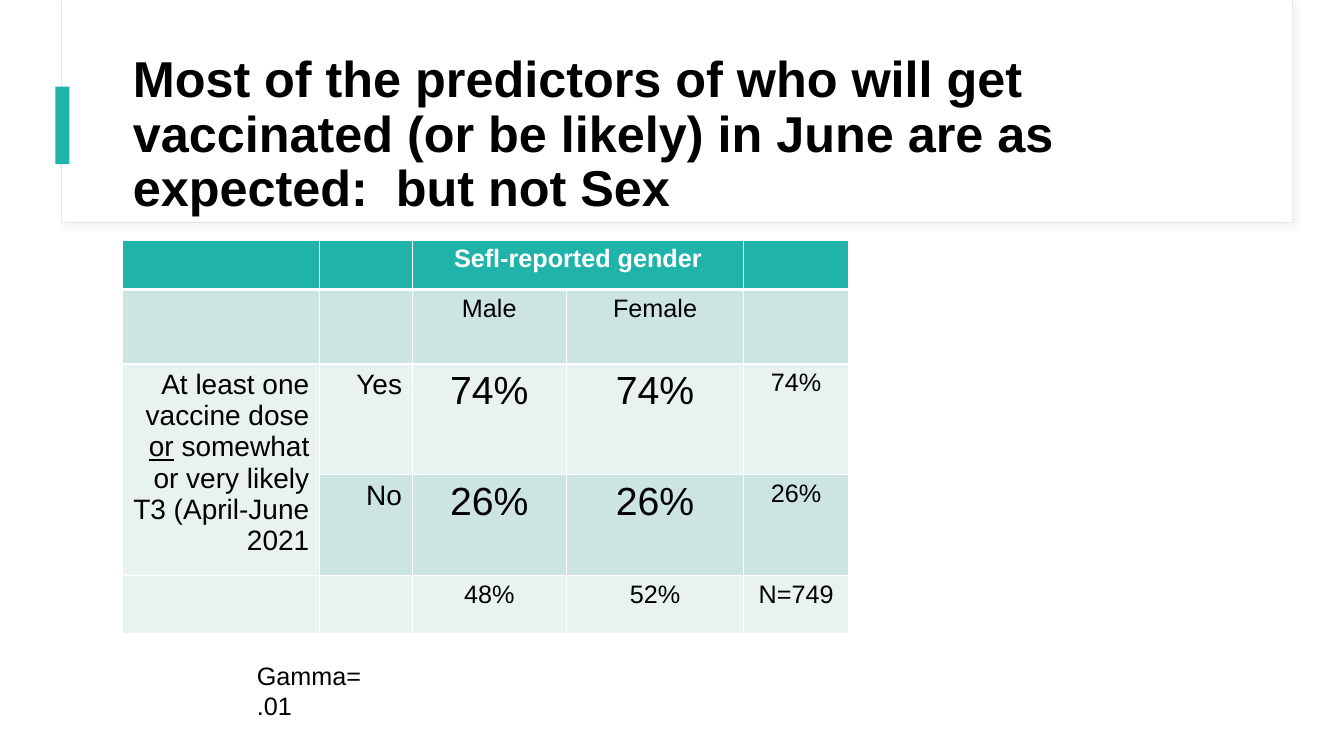
from dataclasses import dataclass
from typing import Optional

from lxml.etree import SubElement
from pptx import Presentation
from pptx.dml.color import RGBColor
from pptx.enum.shapes import MSO_SHAPE as Preset
from pptx.enum.text import MSO_ANCHOR as Anchor, MSO_AUTO_SIZE as AutoSize, PP_ALIGN as Align
from pptx.oxml import parse_xml
from pptx.oxml.ns import nsdecls, qn
from pptx.util import Pt

TEAL = RGBColor(0x20, 0xB3, 0xAA)
MINT = RGBColor(0xCD, 0xE5, 0xE2)
PALE = RGBColor(0xE8, 0xF2, 0xF1)
WHITE = RGBColor(0xFF, 0xFF, 0xFF)
BLACK = RGBColor(0x00, 0x00, 0x00)
FRAME_LINE = RGBColor(0xE3, 0xE6, 0xEF)
SHADOW = RGBColor(0xD9, 0xD9, 0xD9)
FONT = "Arial"


@dataclass(frozen=True)
class Block:
    left: float
    top: float
    width: float
    height: float
    fill: RGBColor
    line: Optional[RGBColor] = None
    shaded: bool = False


@dataclass(frozen=True)
class Entry:
    row: int
    column: int
    words: tuple[str, ...]
    size: float = 18
    align: Align = Align.CENTER
    underlined: str = ""


HEADER_BLOCKS = (
    Block(43.9, 0, 879.1, 159.1, WHITE, FRAME_LINE, True),
    Block(44.6, 0, 878.4, 158.4, WHITE),
    Block(39.6, 61.9, 10.1, 55.4, TEAL),
)

COLUMN_WIDTHS = (140.4, 66.2, 110.2, 126.7, 74.9)
ROW_HEIGHTS = (35.3, 53.3, 79.2, 62.6, 41)
ROW_FILLS = (TEAL, MINT, PALE, MINT, PALE)
ENTRIES = (
    Entry(0, 2, ("Sefl-reported gender",)),
    Entry(1, 2, ("Male",)),
    Entry(1, 3, ("Female",)),
    Entry(2, 0, ("At least one vaccine dose ", "or",
                 " somewhat or very likely T3 (April-June 2021"), 20, Align.RIGHT, "or"),
    Entry(2, 1, ("Yes",), 20, Align.RIGHT),
    Entry(2, 2, ("74%",), 28),
    Entry(2, 3, ("74%",), 28),
    Entry(2, 4, ("74%",)),
    Entry(3, 1, ("No",), 20, Align.RIGHT),
    Entry(3, 2, ("26%",), 28),
    Entry(3, 3, ("26%",), 28),
    Entry(3, 4, ("26%",)),
    Entry(4, 2, ("48%",)),
    Entry(4, 3, ("52%",)),
    Entry(4, 4, ("N=749",)),
)


def add_run(paragraph, words: str, size: float, color: RGBColor = BLACK,
            bold: bool = False, underline: bool = False) -> None:
    run = paragraph.add_run()
    run.text = words
    font = run.font
    font.name, font.size, font.bold = FONT, Pt(size), bold
    font.underline = underline
    font.color.rgb = color


def add_shadow(shape) -> None:
    effects = shape.element.spPr.find(qn("a:effectLst"))
    outer = SubElement(effects, qn("a:outerShdw"), blurRad=str(Pt(4)), dist=str(Pt(3)),
                       dir=str(45 * 60000), algn="tl", rotWithShape="0")
    color = SubElement(outer, qn("a:srgbClr"), val=str(SHADOW))
    SubElement(color, qn("a:alpha"), val="30000")


def draw_block(slide, block: Block) -> None:
    shape = slide.shapes.add_shape(Preset.RECTANGLE, Pt(block.left), Pt(block.top),
                                   Pt(block.width), Pt(block.height))
    shape.shadow.inherit = False
    shape.fill.solid()
    shape.fill.fore_color.rgb = block.fill
    if block.line is None:
        shape.line.fill.background()
    else:
        shape.line.color.rgb = block.line
        shape.line.width = Pt(0.75)
    if block.shaded:
        add_shadow(shape)


def style_cell(cell, row: int) -> None:
    cell.fill.solid()
    cell.fill.fore_color.rgb = ROW_FILLS[row]
    # The rule under the header row is heavier than the rest
    weights = {"L": 1, "R": 1, "T": 3 if row == 1 else 1, "B": 3 if row == 0 else 1}
    properties = cell._tc.get_or_add_tcPr()
    for place, (side, weight) in enumerate(weights.items()):
        properties.insert(place, parse_xml(
            f'<a:ln{side} {nsdecls("a")} w="{Pt(weight)}"><a:solidFill>'
            f'<a:srgbClr val="{WHITE}"/></a:solidFill></a:ln{side}>'))


def fill_entry(table, entry: Entry) -> None:
    paragraph = table.cell(entry.row, entry.column).text_frame.paragraphs[0]
    paragraph.alignment = entry.align
    heading = entry.row == 0
    for words in entry.words:
        add_run(paragraph, words, entry.size, WHITE if heading else BLACK,
                heading, words == entry.underlined)


def draw_table(slide) -> None:
    table = slide.shapes.add_table(len(ROW_HEIGHTS), len(COLUMN_WIDTHS), Pt(87.8), Pt(171.4),
                                   Pt(sum(COLUMN_WIDTHS)), Pt(sum(ROW_HEIGHTS))).table
    for column, width in zip(table.columns, COLUMN_WIDTHS):
        column.width = Pt(width)
    for index, (row, height) in enumerate(zip(table.rows, ROW_HEIGHTS)):
        row.height = Pt(height)
        for cell in row.cells:
            style_cell(cell, index)
    table.cell(0, 2).merge(table.cell(0, 3))
    table.cell(2, 0).merge(table.cell(3, 0))
    for entry in ENTRIES:
        fill_entry(table, entry)


def main() -> None:
    presentation = Presentation()
    presentation.slide_width, presentation.slide_height = Pt(960), Pt(540)
    slide = presentation.slides.add_slide(presentation.slide_layouts[6])

    # Header frame and accent bar
    for block in HEADER_BLOCKS:
        draw_block(slide, block)

    # Headline
    headline = slide.shapes.add_textbox(Pt(87.8), Pt(43.2), Pt(800.6), Pt(108)).text_frame
    headline.word_wrap = True
    headline.vertical_anchor = Anchor.MIDDLE
    headline.paragraphs[0].line_spacing = 0.9
    add_run(headline.paragraphs[0], "Most of the predictors of who will get vaccinated "
            "(or be likely) in June are as expected:  but not Sex", 36, bold=True)

    # Vaccination by gender
    draw_table(slide)

    # Gamma statistic, narrowed to two lines
    gamma = slide.shapes.add_textbox(Pt(176.4), Pt(468), Pt(118.8), Pt(28.8)).text_frame
    gamma.word_wrap = True
    gamma.auto_size = AutoSize.SHAPE_TO_FIT_TEXT
    gamma.margin_right = Pt(24)
    add_run(gamma.paragraphs[0], "Gamma= .01", 18)

    presentation.save("out.pptx")


if __name__ == "__main__":
    main()
